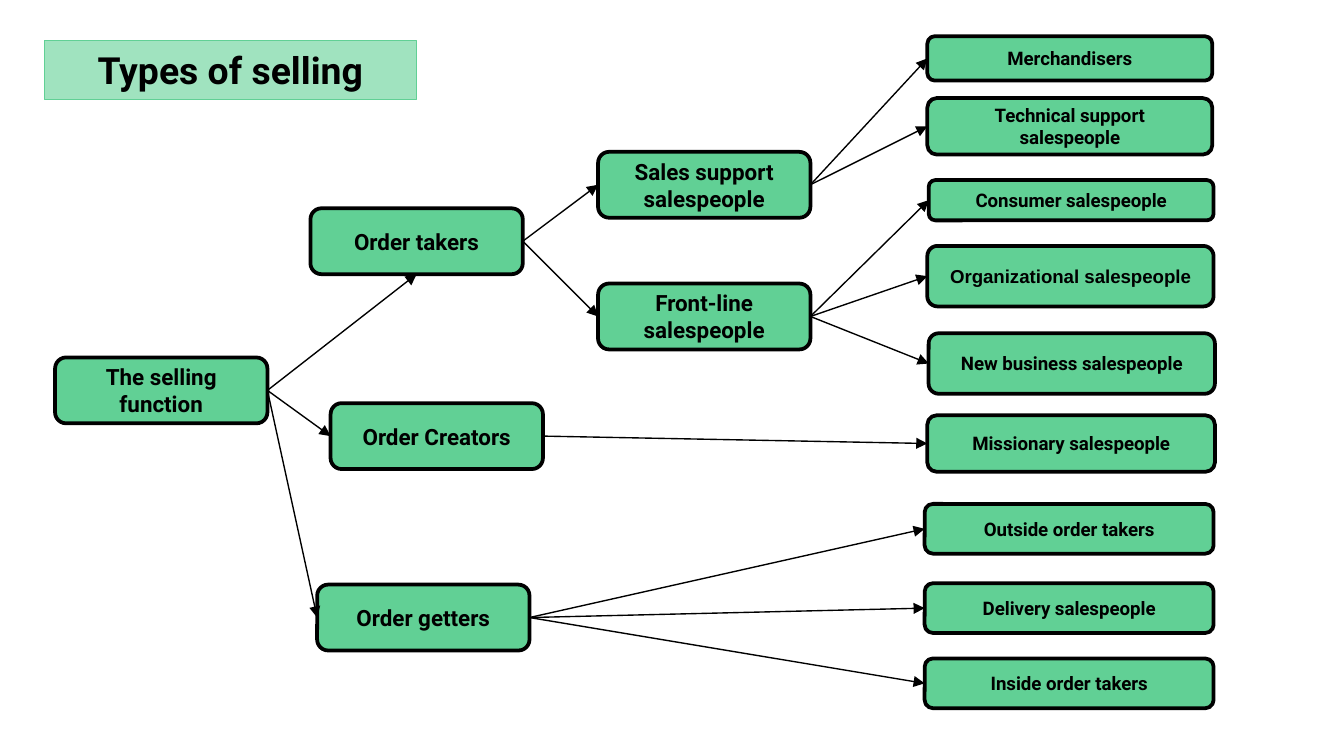
from lxml import etree
from pptx import Presentation
from pptx.dml.color import RGBColor
from pptx.enum.shapes import MSO_CONNECTOR as CONNECTOR, MSO_SHAPE as SHAPE
from pptx.enum.text import MSO_ANCHOR as ANCHOR, PP_ALIGN as ALIGN
from pptx.oxml.ns import qn
from pptx.util import Inches, Pt

BLACK = RGBColor(0x00, 0x00, 0x00)
GREEN = RGBColor(0x61, 0xD0, 0x95)
PALE_GREEN = RGBColor(0xA0, 0xE3, 0xBF)

# Connection sites of a rounded rectangle
LEFT, BOTTOM, RIGHT = 1, 2, 3

# A 16:9 page
deck = Presentation()
deck.slide_width = Inches(10)
deck.slide_height = Inches(10) * 9 // 16
page = deck.slides.add_slide(deck.slide_layouts[6])


def add_box(text, left, top, width, height, shape=SHAPE.ROUNDED_RECTANGLE,
            fill=GREEN, line=BLACK, line_width=2, size=12, font="Roboto",
            anchor=ANCHOR.MIDDLE):
    box = page.shapes.add_shape(shape, Inches(left), Inches(top),
                                Inches(width), Inches(height))
    box.shadow.inherit = False
    box.fill.solid()
    box.fill.fore_color.rgb = fill
    box.line.color.rgb = line
    box.line.width = Pt(line_width)
    frame = box.text_frame
    frame.word_wrap = True
    frame.vertical_anchor = anchor
    para = frame.paragraphs[0]
    para.alignment = ALIGN.CENTER
    span = para.add_run()
    span.text = text
    span.font.name = font
    span.font.size = Pt(size)
    span.font.bold = True
    span.font.color.rgb = BLACK
    return box


def add_arrow(start, end, end_site=LEFT):
    arrow = page.shapes.add_connector(CONNECTOR.STRAIGHT, 0, 0, 0, 0)
    arrow.begin_connect(start, RIGHT)
    arrow.end_connect(end, end_site)
    arrow.line.color.rgb = BLACK
    arrow.line.width = Pt(0.75)
    properties = arrow._element.spPr
    etree.SubElement(properties.find(qn("a:ln")), qn("a:tailEnd"), type="triangle")
    etree.SubElement(properties, qn("a:effectLst"))


add_box("Types of selling", 0.33, 0.3, 2.77, 0.44, shape=SHAPE.RECTANGLE,
        fill=PALE_GREEN, line=GREEN, line_width=0.75, size=20, anchor=ANCHOR.TOP)

# Main branches share one size
boxes = {}
for name, left, top in [
    ("The selling function", 0.41, 2.66),
    ("Order Creators", 2.46, 3),
    ("Order takers", 2.31, 1.55),
    ("Order getters", 2.36, 4.35),
    ("Sales support salespeople", 4.45, 1.13),
    ("Front-line salespeople", 4.45, 2.11),
]:
    boxes[name] = add_box(name, left, top, 1.58, 0.49)

# Sales roles in the right-hand column
for name, left, top, width, height in [
    ("Technical support salespeople", 6.9, 0.73, 2.12, 0.42),
    ("Merchandisers", 6.9, 0.27, 2.12, 0.33),
    ("Consumer salespeople", 6.91, 1.34, 2.12, 0.3),
    ("Organizational salespeople", 6.9, 1.83, 2.13, 0.45),
    ("New business salespeople", 6.91, 2.48, 2.13, 0.45),
    ("Missionary salespeople", 6.9, 3.09, 2.14, 0.42),
    ("Outside order takers", 6.88, 3.75, 2.15, 0.37),
    ("Inside order takers", 6.88, 4.9, 2.15, 0.37),
    ("Delivery salespeople", 6.88, 4.34, 2.15, 0.37),
]:
    font = "Arial" if name == "Organizational salespeople" else "Roboto"
    boxes[name] = add_box(name, left, top, width, height, size=10, font=font)

branches = {
    "The selling function": ["Order takers", "Order Creators", "Order getters"],
    "Order takers": ["Sales support salespeople", "Front-line salespeople"],
    "Sales support salespeople": ["Merchandisers", "Technical support salespeople"],
    "Front-line salespeople": ["Consumer salespeople", "Organizational salespeople",
                               "New business salespeople"],
    "Order Creators": ["Missionary salespeople"],
    "Order getters": ["Outside order takers", "Delivery salespeople",
                      "Inside order takers"],
}
for parent, children in branches.items():
    for child in children:
        site = BOTTOM if child == "Order takers" else LEFT
        add_arrow(boxes[parent], boxes[child], end_site=site)

deck.save("out.pptx")
